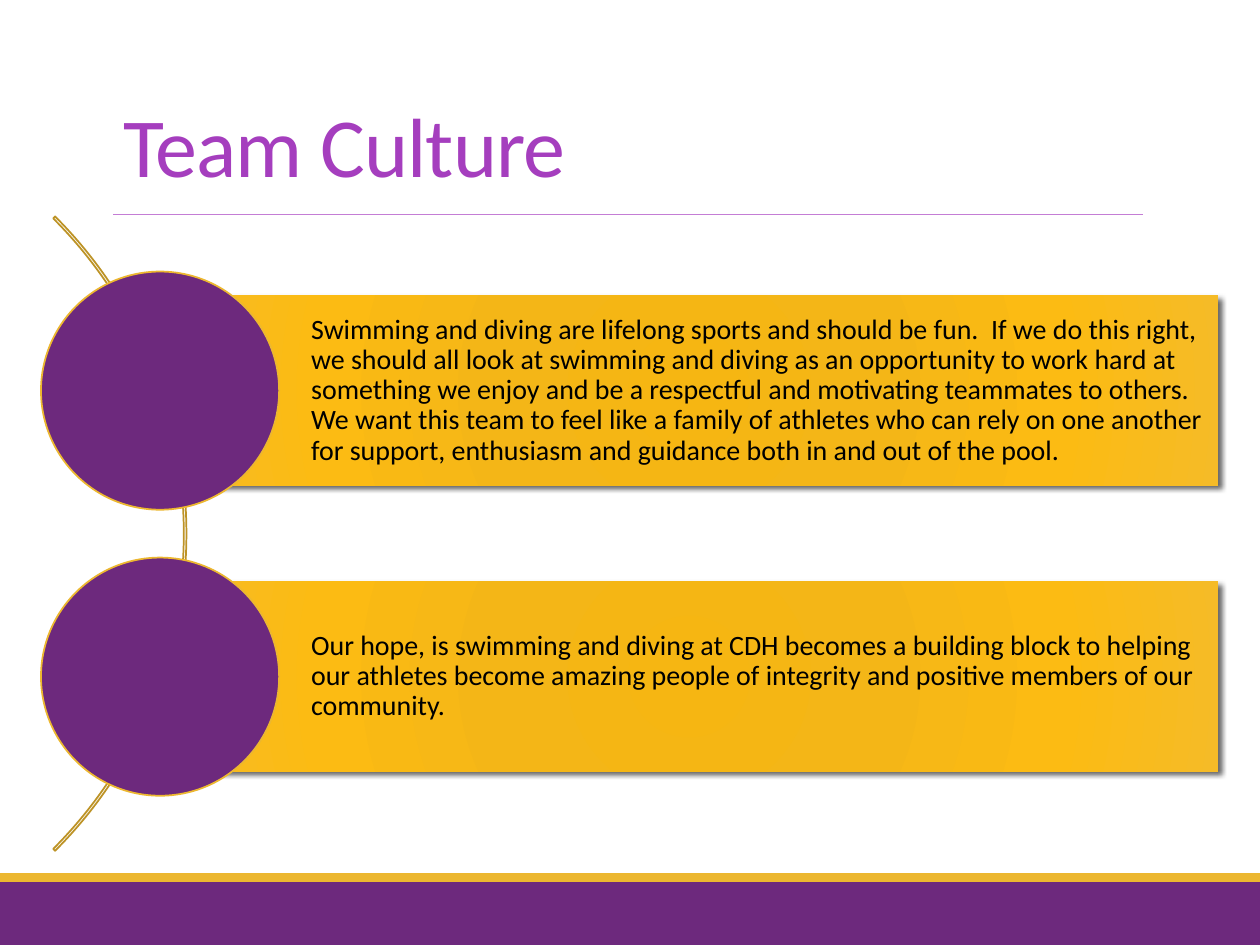
import pptx
import pptx.util
import pptx.dml.color
import pptx.enum.shapes
import pptx.enum.text
import pptx.oxml
import pptx.oxml.ns
from lxml import etree

Inches, Pt = pptx.util.Inches, pptx.util.Pt
RGB = pptx.dml.color.RGBColor
SHAPE = pptx.enum.shapes.MSO_SHAPE
ANCHOR = pptx.enum.text.MSO_ANCHOR
qn = pptx.oxml.ns.qn

TITLE = "Team Culture"
STATEMENTS = [
    "Swimming and diving are lifelong sports and should be fun.  If we do this right, "
    "we should all look at swimming and diving as an opportunity to work hard at "
    "something we enjoy and be a respectful and motivating teammates to others. "
    "We want this team to feel like a family of athletes who can rely on one another "
    "for support, enthusiasm and guidance both in and out of the pool.",
    "Our hope, is swimming and diving at CDH becomes a building block to helping "
    "our athletes become amazing people of integrity and positive members of our "
    "community.",
]

PURPLE = RGB(0x6D, 0x29, 0x7D)
GOLD = RGB(0xEC, 0xB7, 0x30)
DARK_GOLD = RGB(0xBD, 0x93, 0x26)
LILAC = RGB(0xC4, 0x7D, 0xD5)
TITLE_COLOR = RGB(0xA5, 0x3E, 0xBE)
BLACK = RGB(0, 0, 0)
GOLD_STOPS = [(0, "F6B612"), (34, "F4B617"), (70, "FCBB13"), (100, "F5BB27")]

WIDTH, HEIGHT = 10, 7.5
FOOTER_H, STRIPE_H = 0.5, 0.07
ARC_SIZE, ARC_RIGHT = 7.12, 1.48
BAR_LEFT, BAR_W, BAR_H = 1.27, 8.4, 1.51
CIRCLE = 1.89
FIRST_CENTER, ROW_STEP = 3.1, 2.27
ARC_CENTER = FIRST_CENTER + ROW_STEP * (len(STATEMENTS) - 1) / 2


def add_shape(slide, kind, box, fill=None, line=None):
    s = slide.shapes.add_shape(kind, *map(Inches, box))
    s.shadow.inherit = False
    if fill is None:
        s.fill.background()
    else:
        s.fill.solid()
        s.fill.fore_color.rgb = fill
    if line is None:
        s.line.fill.background()
    else:
        s.line.color.rgb = line
        s.line.width = Pt(1)
    return s


def write(s, text, size, color, spacing, anchor, **margins):
    tf = s.text_frame
    tf.word_wrap = True
    tf.vertical_anchor = anchor
    for side, inches in margins.items():
        setattr(tf, f"margin_{side}", Inches(inches))
    p = tf.paragraphs[0]
    p.alignment = pptx.enum.text.PP_ALIGN.LEFT
    p.line_spacing = spacing
    r = p.add_run()
    r.text = text
    for name, value in {"name": "Calibri", "size": Pt(size)}.items():
        setattr(r.font, name, value)
    r.font.color.rgb = color
    return r


def sub(parent, tag, **attrs):
    return etree.SubElement(parent, qn(tag), {k: str(v) for k, v in attrs.items()})


def add_glow_fill(s):
    """Fill the shape with the radial gold gradient."""
    s.fill.gradient()
    grad = s.element.spPr.find(qn("a:gradFill"))
    for child in list(grad):
        grad.remove(child)
    stops = sub(grad, "a:gsLst")
    for pos, color in GOLD_STOPS:
        sub(sub(stops, "a:gs", pos=pos * 1000), "a:srgbClr", val=color)
    path = sub(grad, "a:path", path="circle")
    sub(path, "a:fillToRect", **dict.fromkeys("ltrb", 100000))


def add_drop_shadow(s):
    effects = s.element.spPr.find(qn("a:effectLst"))
    shadow = sub(effects, "a:outerShdw", blurRad=Pt(3), dist=Pt(2),
                 dir=45 * 60000, algn="tl", rotWithShape=0)
    sub(sub(shadow, "a:srgbClr", val="000000"), "a:alpha", val=60000)


def add_frame(slide):
    """Footer bands, title and the rule below it."""
    footer_top = HEIGHT - FOOTER_H
    add_shape(slide, SHAPE.RECTANGLE, (0, footer_top, WIDTH, FOOTER_H), PURPLE)
    add_shape(slide, SHAPE.RECTANGLE, (0, footer_top - STRIPE_H, WIDTH, STRIPE_H), GOLD)
    rule = slide.shapes.add_connector(pptx.enum.shapes.MSO_CONNECTOR.STRAIGHT,
                                      *map(Inches, (0.9, 1.7, 9.07, 1.7)))
    rule.line.color.rgb = LILAC
    rule.line.width = Pt(0.5)
    sub(rule.element.spPr, "a:effectLst")
    title = slide.shapes.add_textbox(*map(Inches, (0.88, 0, 8.25, 1.59)))
    r = write(title, TITLE, 48, TITLE_COLOR, 0.85, ANCHOR.BOTTOM)
    r.font.element.set("spc", "-50") if hasattr(r.font, "element") else \
        r._r.get_or_add_rPr().set("spc", "-50")


def add_statements(slide):
    arc = add_shape(slide, SHAPE.BLOCK_ARC,
                    (ARC_RIGHT - ARC_SIZE, ARC_CENTER - ARC_SIZE / 2, ARC_SIZE, ARC_SIZE),
                    line=DARK_GOLD)
    for i, value in enumerate((189, 27, 0.003)):
        arc.adjustments[i] = value
    for i, text in enumerate(STATEMENTS):
        center = FIRST_CENTER + i * ROW_STEP
        bar = add_shape(slide, SHAPE.RECTANGLE,
                        (BAR_LEFT, center - BAR_H / 2, BAR_W, BAR_H), GOLD)
        add_glow_fill(bar)
        add_drop_shadow(bar)
        write(bar, text, 16, BLACK, 0.9, ANCHOR.MIDDLE,
              left=1.2, top=0.04, right=0.04, bottom=0.04)
        add_shape(slide, SHAPE.OVAL,
                  (BAR_LEFT - CIRCLE / 2, center - CIRCLE / 2, CIRCLE, CIRCLE), PURPLE, GOLD)


def main():
    prs = pptx.Presentation()
    prs.slide_width, prs.slide_height = Inches(WIDTH), Inches(HEIGHT)
    slide = prs.slides.add_slide(prs.slide_layouts[6])
    add_frame(slide)
    add_statements(slide)
    prs.save("out.pptx")


if __name__ == "__main__":
    main()
